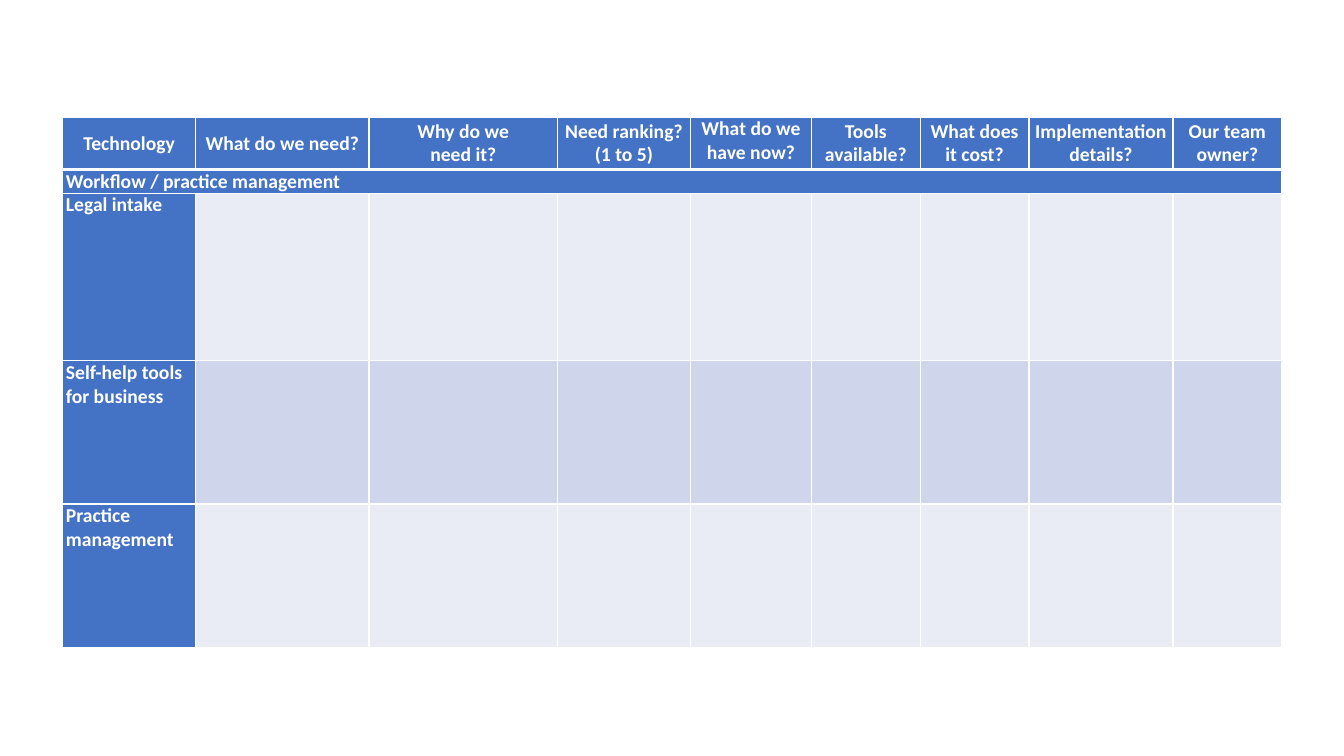
"""Build a one-slide technology planning table for a legal practice."""
from lxml import etree
from pptx import Presentation
from pptx import util as u
from pptx.dml.color import RGBColor
from pptx.enum import text
from pptx.oxml import ns

COLORS = {"header": "4472C4", "light": "E9EBF5", "dark": "CFD5EA", "white": "FFFFFF"}
HEADINGS = [
    "Technology",
    "What do we need?",
    "Why do we\nneed it?",
    "Need ranking?\n(1 to 5)",
    "What do we have now?",
    "Tools available?",
    "What does it cost?",
    "Implementation details?",
    "Our team owner?",
]
ROW_LABELS = [
    "Workflow / practice management",
    "Legal intake",
    "Self-help tools for business",
    "Practice management",
]
COLUMN_WIDTHS = [3.35, 4.37, 4.75, 3.35, 3.05, 2.74, 2.74, 3.63, 2.74]
ROW_HEIGHTS = [1.32, 0.6, 4.22, 3.61, 3.61]
FONT_SIZE = 14


def add_borders(cell, widths):
    """Draw white borders, given a width in points for each side."""
    properties = cell._tc.get_or_add_tcPr()
    for index, (side, width) in enumerate(widths.items()):
        line = etree.Element(ns.qn(f"a:ln{side}"), w=str(u.Pt(width)))
        fill = etree.SubElement(line, ns.qn("a:solidFill"))
        etree.SubElement(fill, ns.qn("a:srgbClr"), val=COLORS["white"])
        properties.insert(index, line)


def write_cell(cell, wording, alignment):
    """Write bold white lines, or size the empty paragraph."""
    for index, line in enumerate(wording.split("\n")):
        frame = cell.text_frame
        para = frame.add_paragraph() if index else frame.paragraphs[0]
        para.alignment = alignment
        if not line:
            etree.SubElement(para._p, ns.qn("a:endParaRPr"), sz=str(FONT_SIZE * 100))
            continue
        span = para.add_run()
        span.text = line
        span.font.name = "Calibri"
        span.font.size = u.Pt(FONT_SIZE)
        span.font.bold = True
        span.font.color.rgb = RGBColor.from_string(COLORS["white"])


deck = Presentation()
deck.slide_width, deck.slide_height = u.Cm(33.87), u.Cm(19.05)
page = deck.slides.add_slide(deck.slide_layouts[6])

table = page.shapes.add_table(
    len(ROW_HEIGHTS), len(COLUMN_WIDTHS),
    u.Cm(1.58), u.Cm(2.95), u.Cm(sum(COLUMN_WIDTHS)), u.Cm(sum(ROW_HEIGHTS)),
).table
for column, width in zip(table.columns, COLUMN_WIDTHS):
    column.width = u.Cm(width)
for row, height in zip(table.rows, ROW_HEIGHTS):
    row.height = u.Cm(height)

wordings = [HEADINGS] + [[label] + [""] * (len(HEADINGS) - 1) for label in ROW_LABELS]
for row_index, row_wordings in enumerate(wordings):
    for column_index, wording in enumerate(row_wordings):
        cell = table.cell(row_index, column_index)
        is_heading = row_index == 0
        cell.margin_left = cell.margin_right = u.Cm(0.08)
        cell.margin_top = cell.margin_bottom = 0
        if is_heading and wording != "What do we have now?":
            cell.vertical_anchor = text.MSO_ANCHOR.MIDDLE
        else:
            cell.vertical_anchor = text.MSO_ANCHOR.TOP
        if row_index < 2 or column_index == 0:
            shade = "header"
        else:
            shade = "dark" if row_index % 2 else "light"
        cell.fill.solid()
        cell.fill.fore_color.rgb = RGBColor.from_string(COLORS[shade])
        add_borders(cell, {
            "L": 1, "R": 1,
            "T": 3 if row_index == 1 else 1,
            "B": 3 if is_heading else 1,
        })
        write_cell(cell, wording, text.PP_ALIGN.CENTER if is_heading else text.PP_ALIGN.LEFT)

table.cell(1, 0).merge(table.cell(1, len(HEADINGS) - 1))

deck.save("out.pptx")
